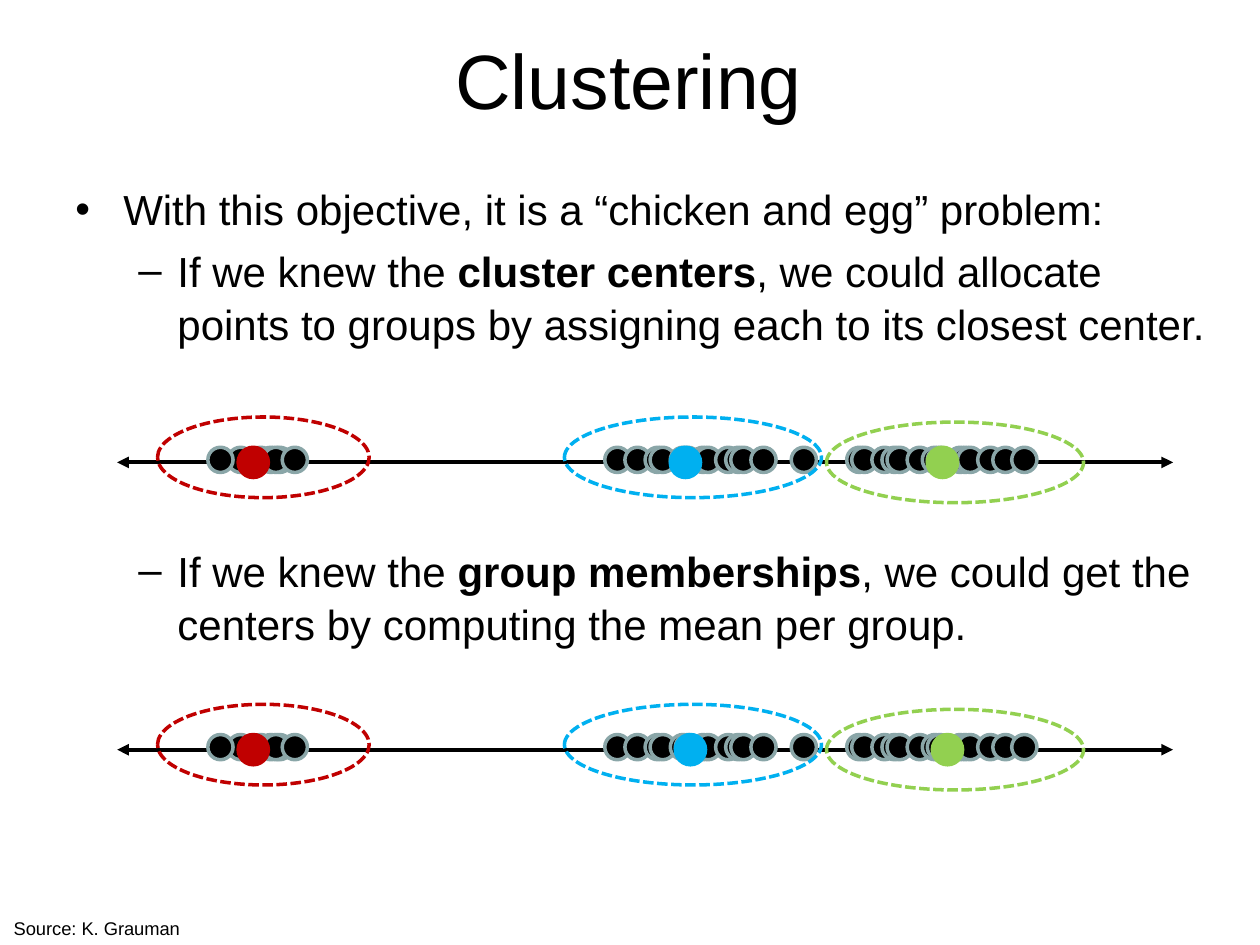
from lxml.etree import SubElement
from pptx import Presentation
from pptx.dml.color import RGBColor
from pptx.enum.dml import MSO_LINE_DASH_STYLE as Dash
from pptx.enum.shapes import MSO_CONNECTOR, MSO_SHAPE
from pptx.enum.text import MSO_ANCHOR, PP_ALIGN
from pptx.oxml.ns import qn
from pptx.util import Inches, Pt

BLACK, GREY = "000000", "8AA6A8"
RED, BLUE, GREEN = "C00000", "00B0F0", "92D050"
POINT_SIZE, CENTER_SIZE = 0.2, 0.24
POINT_LEFTS = [
    1.81, 1.97, 1.65, 2.12, 4.8, 4.96, 5.12, 5.16, 5.32, 5.36, 2.05, 2.09,
    2.24, 6.72, 6.76, 6.92, 7, 7.04, 7.2, 5.48, 5.52, 5.68, 5.76, 5.8,
    5.96, 6.28, 7.32, 7.36, 7.52, 7.56, 7.6, 7.76, 7.88, 8.03,
]
RINGS = [(1.25, -0.24, 1.68, RED), (4.48, -0.24, 2.04, BLUE), (6.56, -0.2, 2.04, GREEN)]
BULLETS = [
    ("•", 0, 0.38, 0.38, 4.8,
     ["With this objective, it is a “chicken and egg” problem:"]),
    ("–", 1, 0.81, 0.31, 4.8,
     ["If we knew the ", "cluster centers",
      ", we could allocate points to groups by assigning each to its closest center."]),
    ("–", 1, 0.81, 0.31, 111,
     ["If we knew the ", "group memberships",
      ", we could get the centers by computing the mean per group."]),
]


def color(value):
    """Turn a hex string into a colour."""
    return RGBColor.from_string(value)


def format_run(run, size, bold=False):
    """Give a run its font."""
    run.font.name = "Arial"
    run.font.size = Pt(size)
    run.font.bold = bold
    run.font.color.rgb = color(BLACK)


def add_text_frame(slide, left, top, width, height):
    """Add a wrapping text box and return its text frame."""
    box = slide.shapes.add_textbox(Inches(left), Inches(top), Inches(width), Inches(height))
    box.text_frame.word_wrap = True
    return box.text_frame


def add_label(slide, bounds, text, size):
    """Add a one-line text and return its text frame."""
    frame = add_text_frame(slide, *bounds)
    frame.text = text
    format_run(frame.paragraphs[0].runs[0], size)
    return frame


def add_bullets(slide):
    """Add the bulleted text, with every second run bold."""
    frame = add_text_frame(slide, 0.5, 1.39, 9.21, 4.95)
    for index, (mark, level, margin, hanging, gap, parts) in enumerate(BULLETS):
        paragraph = frame.add_paragraph() if index else frame.paragraphs[0]
        paragraph.level = level
        paragraph.space_before = Pt(gap)
        paragraph.line_spacing = 1.05
        properties = paragraph._p.get_or_add_pPr()
        properties.set("marL", str(Inches(margin)))
        properties.set("indent", str(-Inches(hanging)))
        SubElement(properties, qn("a:buFont"), typeface="Arial")
        SubElement(properties, qn("a:buChar"), char=mark)
        for position, part in enumerate(parts):
            run = paragraph.add_run()
            run.text = part
            format_run(run, 24, position % 2 == 1)


def add_ellipse(shapes, left, top, width, height, line, fill=None):
    """Add an ellipse, filled or as a dashed ring."""
    shape = shapes.add_shape(
        MSO_SHAPE.OVAL, Inches(left), Inches(top), Inches(width), Inches(height))
    shape.shadow.inherit = False
    shape.line.color.rgb = color(line)
    shape.line.width = Pt(2)
    if fill:
        shape.fill.solid()
        shape.fill.fore_color.rgb = color(fill)
    else:
        shape.fill.background()
        shape.line.dash_style = Dash.SQUARE_DOT


def add_axis(shapes, y):
    """Add the number line with an arrowhead at each end."""
    axis = shapes.add_connector(
        MSO_CONNECTOR.STRAIGHT, Inches(0.93), Inches(y), Inches(9.31), Inches(y))
    axis.line.color.rgb = color(BLACK)
    axis.line.width = Pt(2.25)
    outline = axis.line._get_or_add_ln()
    for end in ("a:headEnd", "a:tailEnd"):
        SubElement(outline, qn(end), type="triangle")
    SubElement(axis._element.spPr, qn("a:effectLst"))


def add_cluster_row(slide, top, center_lefts):
    """Add one number line with its points, cluster centers and rings."""
    shapes = slide.shapes.add_group_shape().shapes
    add_axis(shapes, top + 0.12)
    for left in POINT_LEFTS:
        add_ellipse(shapes, left, top, POINT_SIZE, POINT_SIZE, GREY, BLACK)
    for left, hue in zip(center_lefts, (RED, BLUE, GREEN)):
        add_ellipse(slide.shapes, left, top, CENTER_SIZE, CENTER_SIZE, hue, hue)
    for left, offset, width, hue in RINGS:
        add_ellipse(slide.shapes, left, top + offset, width, 0.64, hue)


def main():
    """Build the slide and save it."""
    presentation = Presentation()
    presentation.slide_width, presentation.slide_height = Inches(10), Inches(7.5)
    slide = presentation.slides.add_slide(presentation.slide_layouts[6])
    title = add_label(slide, (0.49, 0, 9, 1.25), "Clustering", 44)
    title.vertical_anchor = MSO_ANCHOR.MIDDLE
    title.paragraphs[0].alignment = PP_ALIGN.CENTER
    add_bullets(slide)
    add_cluster_row(slide, 3.55, (1.89, 5.32, 7.36))
    add_cluster_row(slide, 5.83, (1.89, 5.36, 7.4))
    add_label(slide, (0.01, 7.23, 2.81, 0.28), "Source: K. Grauman", 10.5)
    presentation.save("out.pptx")


if __name__ == "__main__":
    main()
